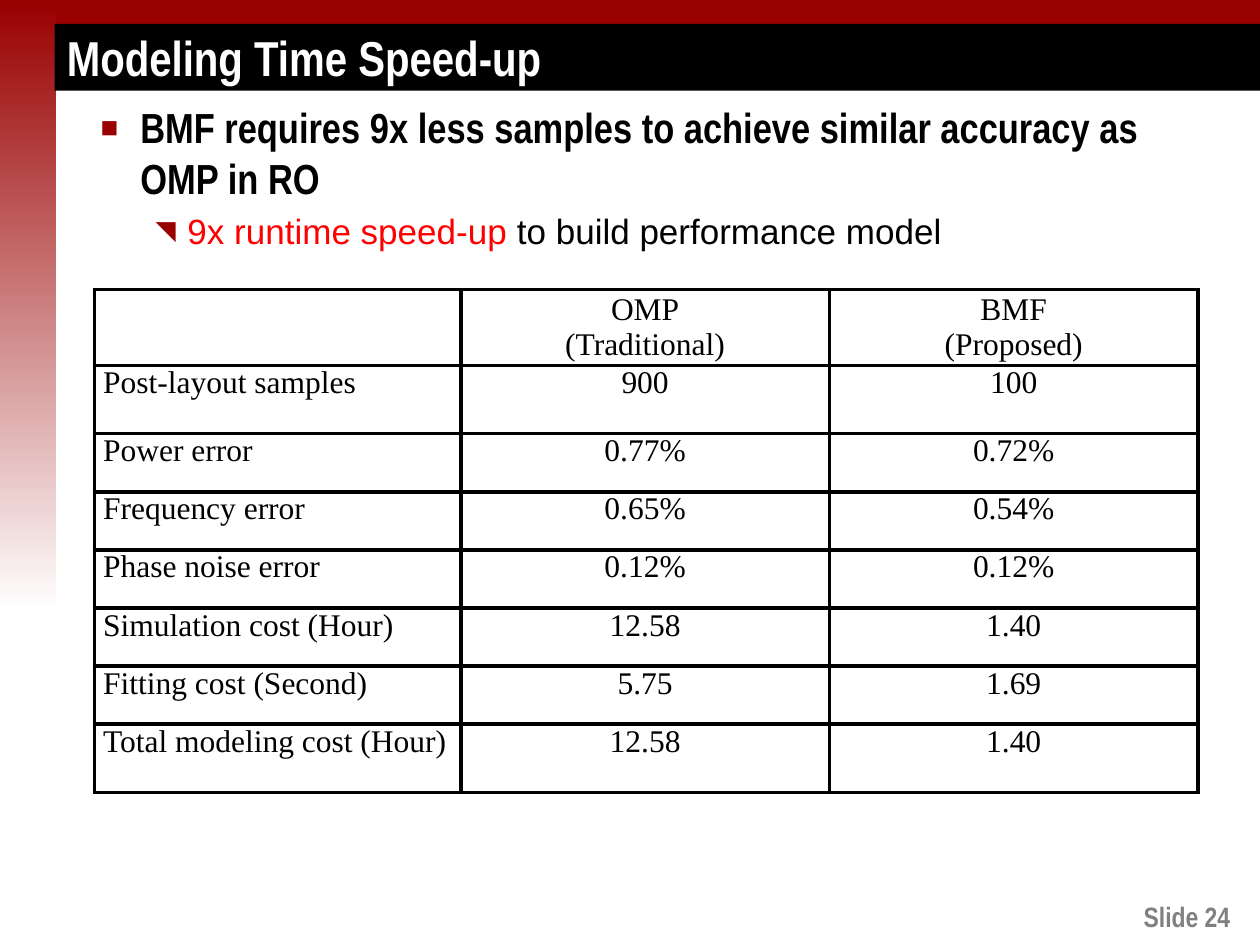
from lxml import etree
from pptx import Presentation
from pptx.dml.color import RGBColor
from pptx.enum import shapes, text
from pptx.oxml.ns import qn
from pptx.util import Cm, Pt

DARK_RED = RGBColor(0x99, 0x00, 0x00)
RED = RGBColor(0xFF, 0x00, 0x00)
BLACK = RGBColor(0x00, 0x00, 0x00)
WHITE = RGBColor(0xFF, 0xFF, 0xFF)
GRAY = RGBColor(0x80, 0x80, 0x80)

NARROW, SANS, SERIF = "Arial Narrow", "Arial", "Times New Roman"
LEFT, RIGHT = text.PP_ALIGN.LEFT, text.PP_ALIGN.RIGHT
CENTER, JUSTIFY = text.PP_ALIGN.CENTER, text.PP_ALIGN.JUSTIFY

HEADER = ["", "OMP\n(Traditional)", "BMF\n(Proposed)"]
RESULTS = [
    ["Post-layout samples", "900", "100"],
    ["Power error", "0.77%", "0.72%"],
    ["Frequency error", "0.65%", "0.54%"],
    ["Phase noise error", "0.12%", "0.12%"],
    ["Simulation cost (Hour)", "12.58", "1.40"],
    ["Fitting cost (Second)", "5.75", "1.69"],
    ["Total modeling cost (Hour)", "12.58", "1.40"],
]
COLUMN_WIDTHS = [7.39, 7.43, 7.43]
TALL_ROW, ROW = 1.38, 1.17
ROW_HEIGHTS = [TALL_ROW, TALL_ROW] + [ROW] * 5 + [TALL_ROW]


def add_span(para, words, font=SANS, size=18, color=BLACK, bold=False, align=LEFT):
    para.alignment = align
    span = para.add_run()
    span.text = words
    span.font.name = font
    span.font.size = Pt(size)
    span.font.bold = bold
    span.font.color.rgb = color


def add_bar(page, left, top, width, height, color):
    bar = page.shapes.add_shape(shapes.MSO_SHAPE.RECTANGLE,
                                Cm(left), Cm(top), Cm(width), Cm(height))
    bar.shadow.inherit = False
    bar.line.fill.background()
    bar.fill.solid()
    bar.fill.fore_color.rgb = color
    return bar


def fade_to_white(bar):
    """Fill the bar from dark red at the top to white at the bottom."""
    bar.fill.gradient()
    bar.fill.gradient_angle = 270
    for stop, color, position in zip(bar.fill.gradient_stops, (DARK_RED, WHITE), (0, 1)):
        stop.color.rgb = color
        stop.position = position


def add_text_box(page, left, top, width, height):
    box = page.shapes.add_textbox(Cm(left), Cm(top), Cm(width), Cm(height))
    box.text_frame.word_wrap = True
    return box.text_frame


def set_bullet(para, symbol, percent, margin, hanging):
    """Give the paragraph a dark red bullet and a hanging indent."""
    properties = para._p.get_or_add_pPr()
    properties.set("marL", str(Cm(margin)))
    properties.set("indent", str(-Cm(hanging)))
    color = etree.SubElement(properties, qn("a:buClr"))
    etree.SubElement(color, qn("a:srgbClr"), val=str(DARK_RED))
    etree.SubElement(properties, qn("a:buSzPct"), val=str(percent * 1000))
    etree.SubElement(properties, qn("a:buFont"), typeface=SANS)
    etree.SubElement(properties, qn("a:buChar"), char=symbol)


def set_borders(cell, width):
    properties = cell._tc.get_or_add_tcPr()
    for index, side in enumerate(("lnL", "lnR", "lnT", "lnB")):
        line = etree.Element(qn("a:" + side), w=str(Pt(width)))
        fill = etree.SubElement(line, qn("a:solidFill"))
        etree.SubElement(fill, qn("a:srgbClr"), val=str(BLACK))
        properties.insert(index, line)


def fill_cell(cell, words, align, anchor):
    cell.margin_left = cell.margin_right = Cm(0.18)
    cell.margin_top = cell.margin_bottom = 0
    cell.vertical_anchor = anchor
    cell.fill.solid()
    cell.fill.fore_color.rgb = WHITE
    set_borders(cell, 2.25)
    frame = cell.text_frame
    for index, line in enumerate(words.split("\n") if words else []):
        para = frame.add_paragraph() if index else frame.paragraphs[0]
        add_span(para, line, font=SERIF, align=align)


def add_results_table(page):
    rows = [HEADER] + RESULTS
    table = page.shapes.add_table(len(rows), len(HEADER), Cm(1.9), Cm(5.84),
                                  Cm(sum(COLUMN_WIDTHS)), Cm(sum(ROW_HEIGHTS))).table
    table.horz_banding = False
    for column, width in zip(table.columns, COLUMN_WIDTHS):
        column.width = Cm(width)
    for r, (values, height) in enumerate(zip(rows, ROW_HEIGHTS)):
        table.rows[r].height = Cm(height)
        anchor = text.MSO_ANCHOR.TOP if r else text.MSO_ANCHOR.MIDDLE
        for c, words in enumerate(values):
            fill_cell(table.cell(r, c), words, CENTER if c else JUSTIFY, anchor)


def add_title(page):
    frame = add_bar(page, 1.1, 0.48, 24.3, 1.35, BLACK).text_frame
    frame.word_wrap = True
    frame.vertical_anchor = text.MSO_ANCHOR.MIDDLE
    add_span(frame.paragraphs[0], "Modeling Time Speed-up",
             font=NARROW, size=28, color=WHITE, bold=True)


def add_body(page):
    frame = add_text_box(page, 1.78, 1.93, 21.95, 4)
    claim = frame.paragraphs[0]
    claim.space_before = Pt(4.8)
    set_bullet(claim, "■", 70, 0.8, 0.8)
    add_span(claim, "BMF requires 9x less samples to achieve similar accuracy as OMP in RO",
             font=NARROW, size=24, bold=True)

    detail = frame.add_paragraph()
    detail.level = 1
    detail.space_before = Pt(4)
    set_bullet(detail, "◥", 75, 1.75, 0.64)
    add_span(detail, "9x runtime speed-up ", size=20, color=RED)
    add_span(detail, "to build performance model", size=20)


def add_slide_number(page):
    frame = add_text_box(page, 1.78, 18.01, 23.52, 0.94)
    frame.margin_right = Cm(0.5)
    add_span(frame.paragraphs[0], "Slide 24", font=NARROW, size=16,
             color=GRAY, bold=True, align=RIGHT)


def main():
    deck = Presentation()
    deck.slide_width, deck.slide_height = Cm(25.4), Cm(19.05)
    page = deck.slides.add_slide(deck.slide_layouts[6])
    add_bar(page, 0, 0, 25.4, 0.64, DARK_RED)
    fade_to_white(add_bar(page, 0, 0, 1.14, 12.34, DARK_RED))
    add_slide_number(page)
    add_title(page)
    add_body(page)
    add_results_table(page)
    deck.save("out.pptx")


if __name__ == "__main__":
    main()
